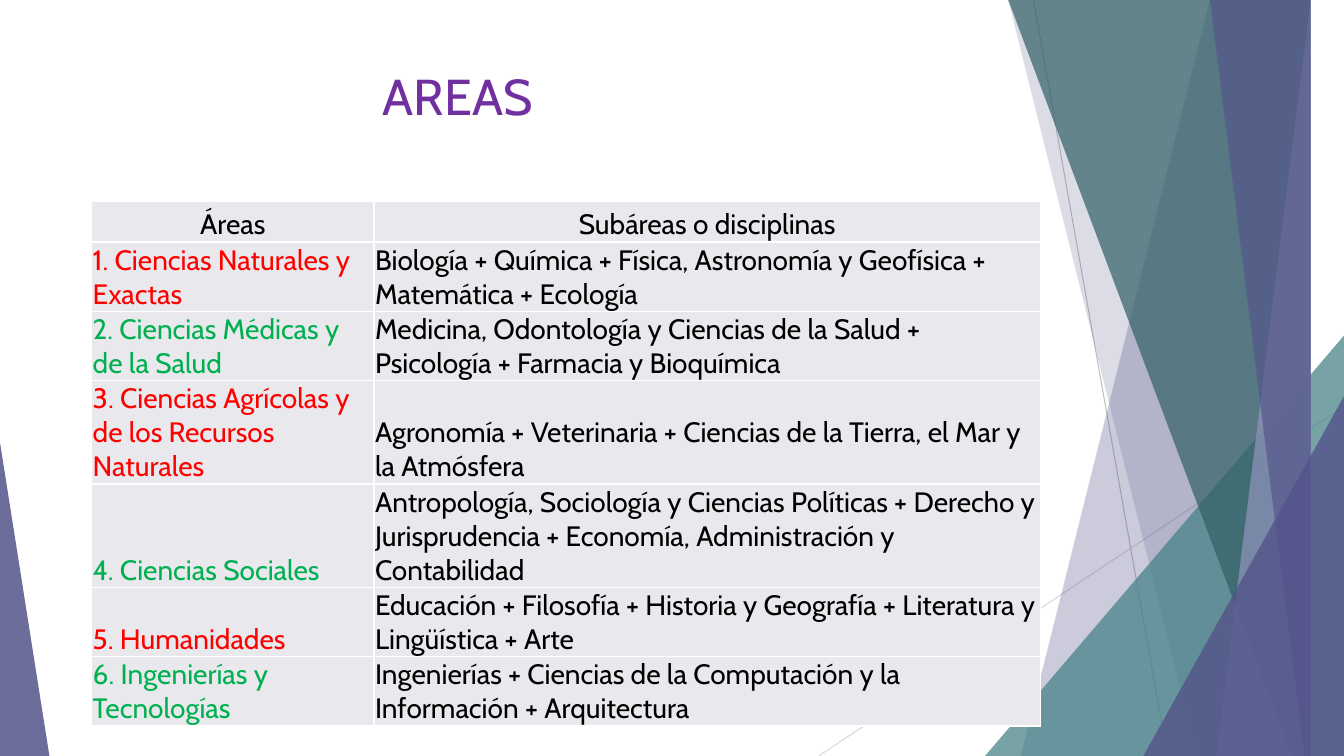
import pptx
import pptx.util
import pptx.dml.color
import pptx.enum.shapes
import pptx.enum.text
import pptx.oxml
import pptx.oxml.ns
from lxml import etree

Inches, Pt = pptx.util.Inches, pptx.util.Pt
rgb = pptx.dml.color.RGBColor.from_string
qn = pptx.oxml.ns.qn
ALIGN = pptx.enum.text.PP_ALIGN
ANCHOR = pptx.enum.text.MSO_ANCHOR

COLORS = {
    "indigo": "53548A", "lavender": "9394BE", "teal": "438086",
    "dark_teal": "326065", "gray": "BFBFBF", "light_gray": "D9D9D9",
    "title": "7030A0", "cell": "E9E9ED", "border": "FFFFFF",
    "black": "000000", "red": "FF0000", "green": "00B050",
}
FONT = "Cabin"

presentation = pptx.Presentation()
presentation.slide_width = Inches(13.33)
presentation.slide_height = Inches(7.5)
slide = presentation.slides.add_slide(presentation.slide_layouts[5])


def style_facet(shape, color, opacity):
    """Give a decorative shape a see-through fill, no outline and no shadow."""
    shape.shadow.inherit = False
    shape.line.fill.background()
    shape.fill.solid()
    shape.fill.fore_color.rgb = rgb(COLORS[color])
    color_element = shape._element.spPr.find(qn("a:solidFill"))[0]
    etree.SubElement(color_element, qn("a:alpha"), val=str(opacity * 1000))


# Thin background lines
for x1, y1, x2, y2, color in [
    (10.25, 0, 11.58, 7.5, "gray"),
    (13.33, 4.03, 8.12, 7.5, "light_gray"),
]:
    connector = slide.shapes.add_connector(
        pptx.enum.shapes.MSO_CONNECTOR.STRAIGHT,
        Inches(x1), Inches(y1), Inches(x2), Inches(y2))
    connector.line.color.rgb = rgb(COLORS[color])
    connector.line.width = Pt(0.75)
    etree.SubElement(connector._element.spPr, qn("a:effectLst"))

# Facets from back to front: a band is (top x, bottom x) and runs to the right
# edge; a triangle is (left, top, width, height, apex position)
for outline, color, opacity in [
    ((12.28, 10.04), "indigo", 30),
    ((10.5, 11.83), "indigo", 20),
    ((9.77, 3.33, 3.56, 4.17, 1), "teal", 72),
    ((10.21, 12.91), "dark_teal", 70),
    ((13.03, 11.92), "lavender", 70),
    ((11.96, 13.18), "indigo", 65),
    ((11.34, 3.93, 1.99, 3.57, 1), "indigo", 80),
    ((0, 4.39, 0.49, 3.11, 0), "indigo", 85),
]:
    if len(outline) == 2:
        top_x, bottom_x = outline
        builder = slide.shapes.build_freeform(top_x, -0.01, scale=Inches(1))
        builder.add_line_segments(
            [(13.33, -0.01), (13.33, 7.5), (bottom_x, 7.5)], close=True)
        facet = builder.convert_to_shape()
    else:
        *box, apex = outline
        facet = slide.shapes.add_shape(
            pptx.enum.shapes.MSO_SHAPE.ISOSCELES_TRIANGLE,
            *[Inches(value) for value in box])
        facet.adjustments[0] = apex
    style_facet(facet, color, opacity)

# Title
title = slide.shapes.title
title.left, title.top = Inches(-0.16), Inches(0.6)
title.width, title.height = Inches(9.4), Inches(1.44)
title.text_frame.text = "AREAS"
title.text_frame.vertical_anchor = ANCHOR.TOP
paragraph = title.text_frame.paragraphs[0]
paragraph.alignment = ALIGN.CENTER
paragraph.font.name = FONT
paragraph.font.size = Pt(36)
paragraph.font.color.rgb = rgb(COLORS["title"])

# Table of areas: row height, area, subareas
rows = [
    (0.4, "Áreas", "Subáreas o disciplinas"),
    (0.39, "1. Ciencias Naturales y Exactas",
     "Biología + Química + Física, Astronomía y Geofísica + Matemática + Ecología"),
    (0.39, "2. Ciencias Médicas y de la Salud",
     "Medicina, Odontología y Ciencias de la Salud + Psicología + Farmacia y Bioquímica"),
    (0.48, "3. Ciencias Agrícolas y de los Recursos Naturales",
     "Agronomía + Veterinaria + Ciencias de la Tierra, el Mar y la Atmósfera"),
    (0.47, "4. Ciencias Sociales",
     "Antropología, Sociología y Ciencias Políticas + Derecho y Jurisprudencia"
     " + Economía, Administración y Contabilidad"),
    (0.39, "5. Humanidades",
     "Educación + Filosofía + Historia y Geografía + Literatura y Lingüística + Arte"),
    (0.4, "6. Ingenierías y Tecnologías",
     "Ingenierías + Ciencias de la Computación y la Información + Arquitectura"),
]
table = slide.shapes.add_table(
    len(rows), 2, Inches(0.91), Inches(2), Inches(9.41), Inches(5.13)).table
table.first_row = False
table.horz_banding = False
for column, width in zip(table.columns, (2.8, 6.61)):
    column.width = Inches(width)

for row_index, (height, *texts) in enumerate(rows):
    table.rows[row_index].height = Inches(height)
    for column_index, text in enumerate(texts):
        cell = table.cell(row_index, column_index)
        cell.text = text
        cell.vertical_anchor = ANCHOR.BOTTOM
        cell.margin_left = cell.margin_right = cell.margin_top = Inches(0.01)
        cell.margin_bottom = 0

        paragraph = cell.text_frame.paragraphs[0]
        paragraph.alignment = ALIGN.CENTER if row_index == 0 else ALIGN.LEFT
        paragraph.font.name = FONT
        paragraph.font.size = Pt(20)
        if row_index == 0 or column_index == 1:
            color = "black"
        else:
            color = "red" if row_index % 2 else "green"
        paragraph.font.color.rgb = rgb(COLORS[color])

        properties = cell._tc.get_or_add_tcPr()
        for side in ("a:lnL", "a:lnR", "a:lnT", "a:lnB"):
            border = etree.SubElement(properties, qn(side), w=str(Pt(1)))
            border_fill = etree.SubElement(border, qn("a:solidFill"))
            etree.SubElement(border_fill, qn("a:srgbClr"), val=COLORS["border"])
        cell.fill.solid()
        cell.fill.fore_color.rgb = rgb(COLORS["cell"])

presentation.save("out.pptx")
